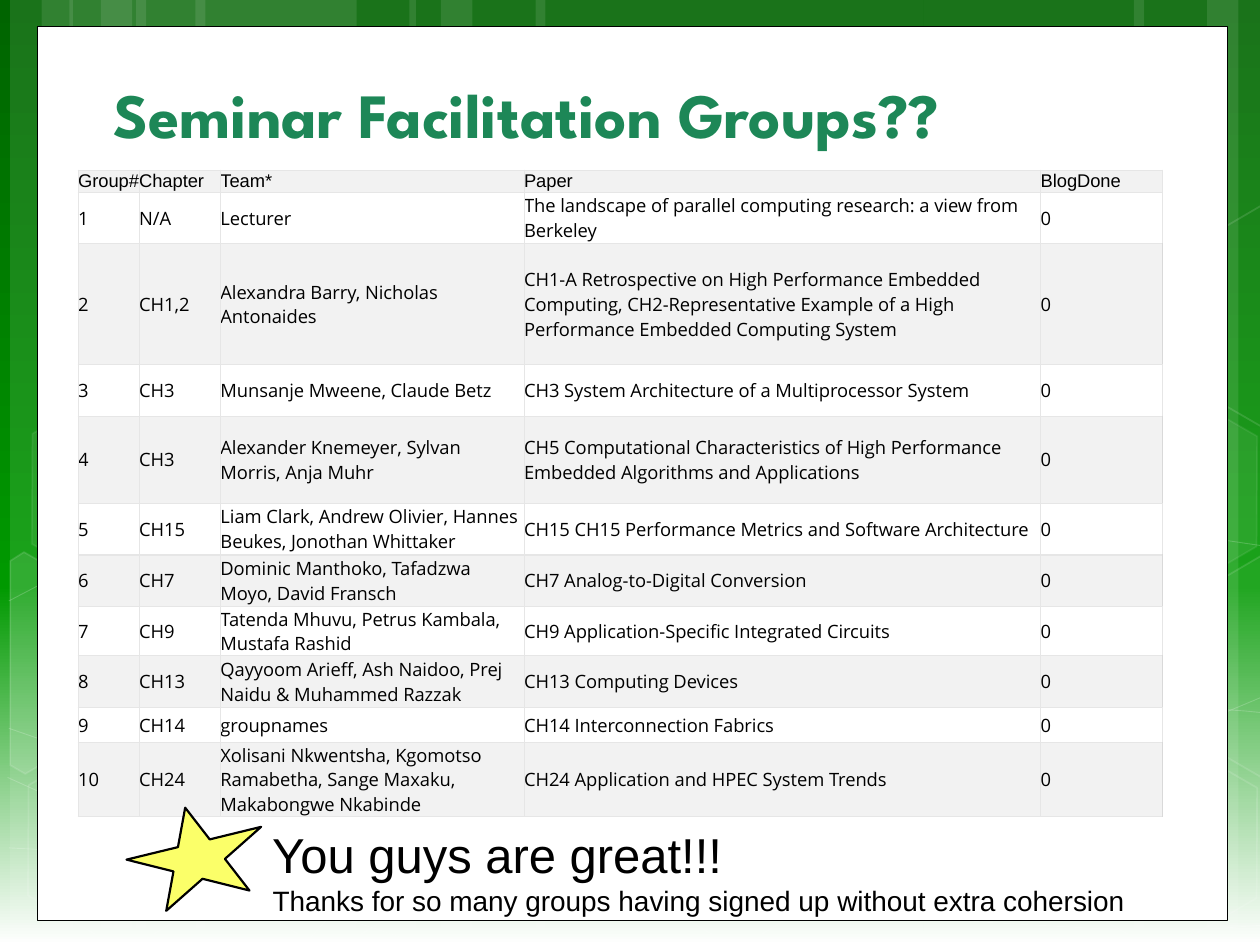
import dataclasses
import math
import typing

import lxml.etree
import pptx
import pptx.dml.color
import pptx.enum.shapes
import pptx.enum.text
import pptx.oxml
import pptx.oxml.ns
import pptx.util

RGB = pptx.dml.color.RGBColor
SHAPE = pptx.enum.shapes.MSO_SHAPE
ANCHOR = pptx.enum.text.MSO_ANCHOR
ALIGN = pptx.enum.text.PP_ALIGN
qn = pptx.oxml.ns.qn

WHITE = RGB(0xFF, 0xFF, 0xFF)
BLACK = RGB(0x00, 0x00, 0x00)
DARK_GREEN = RGB(0x00, 0x64, 0x00)
MID_GREEN = RGB(0x00, 0x99, 0x00)
TITLE_GREEN = RGB(0x1D, 0x87, 0x57)
BAND = RGB(0xF2, 0xF2, 0xF2)
RULE = RGB(0xE6, 0xE6, 0xE6)
EDGE_RULE = RGB(0xD9, 0xD9, 0xD9)
YELLOW = RGB(0xFB, 0xFF, 0x69)

# The slide is a grid of 100 columns by 75 rows of square units
UNIT = pptx.util.Inches(0.1)
COLS, ROWS = 100, 75
HEXAGON_TURN = 30
Point = tuple[float, float]


@dataclasses.dataclass
class Box:
    x: float
    y: float
    w: float
    h: float

    def emu(self) -> list[int]:
        return [round(v * UNIT) for v in (self.x, self.y, self.w, self.h)]


@dataclasses.dataclass
class Style:
    fill: typing.Optional[RGB] = None
    alpha: int = 100
    line: typing.Optional[RGB] = None
    width: float = 1
    line_alpha: int = 100


def set_alpha(fill, percent: int) -> None:
    if percent < 100:
        color = fill._xPr.find(qn("a:solidFill"))[0]
        lxml.etree.SubElement(color, qn("a:alpha")).set("val", str(percent * 1000))


def apply_style(sp, style: Style) -> None:
    sp.shadow.inherit = False
    for fill, color, alpha in ((sp.fill, style.fill, style.alpha),
                               (sp.line.fill, style.line, style.line_alpha)):
        if color is None:
            fill.background()
        else:
            fill.solid()
            fill.fore_color.rgb = color
            set_alpha(fill, alpha)
    if style.line is not None:
        sp.line.width = pptx.util.Pt(style.width)


def add_shape(s, kind, box: Box, style: Style, rotation: float = 0):
    sp = s.shapes.add_shape(kind, *box.emu())
    sp.rotation = rotation
    apply_style(sp, style)
    return sp


def add_outline(s, points: list[Point], style: Style, close: bool):
    start, *rest = [(round(x * UNIT), round(y * UNIT)) for x, y in points]
    builder = s.shapes.build_freeform(*start, scale=1.0)
    builder.add_line_segments(rest, close=close)
    sp = builder.convert_to_shape()
    apply_style(sp, style)
    return sp


def turn_back(points: list[Point], pivot: Point, degrees: float) -> list[Point]:
    cos, sin = math.cos(math.radians(degrees)), math.sin(math.radians(degrees))
    px, py = pivot
    return [(px + (x - px) * cos + (y - py) * sin, py - (x - px) * sin + (y - py) * cos)
            for x, y in points]


def bezier(points: list[Point], steps: int = 3) -> list[Point]:
    """Sample chained cubic curves: a start, then three points per curve."""
    out = [points[0]]
    for i in range(0, len(points) - 1, 3):
        for k in range(1, steps + 1):
            t = k / steps
            weights = ((1 - t) ** 3, 3 * t * (1 - t) ** 2, 3 * t * t * (1 - t), t ** 3)
            x, y = (sum(w * p[axis] for w, p in zip(weights, points[i:i + 4])) for axis in (0, 1))
            out.append((x, y))
    return out


def write(tf, text: str, *, size: float, font: str = "Arial", color: RGB = BLACK,
          bold: bool = False, align=ALIGN.LEFT) -> None:
    p = tf.paragraphs[0]
    p.alignment = align
    r = p.add_run()
    r.text = text
    r.font.size, r.font.name, r.font.bold = pptx.util.Pt(size), font, bold
    r.font.color.rgb = color


def add_text(s, box: Box, text: str, wrap: bool = False, anchor=ANCHOR.TOP, **fmt) -> None:
    tf = s.shapes.add_textbox(*box.emu()).text_frame
    tf.word_wrap, tf.vertical_anchor = wrap, anchor
    write(tf, text, **fmt)


def set_borders(cell, right: RGB) -> None:
    tcPr = cell._tc.get_or_add_tcPr()
    for i, (side, color) in enumerate((("L", RULE), ("R", right), ("T", RULE), ("B", RULE))):
        ln = lxml.etree.Element(qn(f"a:ln{side}"), w=str(pptx.util.Pt(0.75)))
        fill = lxml.etree.SubElement(ln, qn("a:solidFill"))
        lxml.etree.SubElement(fill, qn("a:srgbClr")).set("val", str(color))
        tcPr.insert(i, ln)


# Backdrop: strips as (left, width), curves as points
STRIPS = [(10.8, 17.5), (0.8, 5), (3.3, 8.3), (15.5, 17.5), (5.5, 5), (8, 8.3),
          (73.3, 17.5), (95.8, 5), (90, 8.3), (42.5, 30.8), (32.5, 5), (35, 8.3)]
CURVES = [
    [(0.7, 67.3), (6.1, 67.6), (11.5, 67.9), (19, 67.8), (26.5, 67.7), (35.8, 67.5), (45.8, 66.5),
     (55.8, 65.5), (70, 63.6), (79.2, 61.7), (88.3, 59.8), (97.7, 56.8), (100.7, 55.1)],
    [(0.7, 47.7), (3.6, 46.1), (6.5, 44.6), (12.1, 43.1), (17.8, 41.6), (25.9, 39.4), (34.7, 38.7),
     (43.6, 38), (54.4, 37.9), (65.4, 38.7), (76.4, 39.5), (94.7, 42.6), (100.7, 43.4)],
    [(0.6, 61.7), (12.7, 67.2), (24.7, 72.7), (33.4, 74.9)],
    [(0.7, 57.8), (3.8, 58.9), (7, 60), (12.8, 61.6), (18.6, 63.1), (27.3, 65.6), (35.7, 67.3),
     (44, 69), (54.5, 70.8), (62.8, 71.8), (71.1, 72.9), (80, 73.3), (85.3, 73.6),
     (90.5, 74), (91.9, 73.8), (94.5, 73.8), (97.1, 73.7), (98.9, 73.5), (100.7, 73.4)],
    [(24.2, 74.9), (26, 72.9), (27.8, 70.9), (30.2, 69.1), (32.6, 67.3), (36, 65.3), (38.8, 63.9),
     (41.6, 62.5), (43.3, 61.9), (47, 60.9), (50.6, 59.9), (57.3, 58.5), (60.8, 57.8),
     (64.4, 57.1), (64.9, 57.1), (68, 56.9), (71.1, 56.6), (76, 56.3), (79.4, 56.2),
     (82.9, 56.1), (88.6, 56.2), (95.3, 56.2), (97.1, 56.3), (98.8, 56.4), (100.6, 56.6)],
]
# Hexagons as (left, top, fill opacity, line opacity)
HEXAGONS = [(49.7, 58.9, 6, 12), (1.1, 59.1, 0, 12), (1.4, 31.2, 7, 8),
            (17.4, 59.2, 0, 12), (83.4, 59.3, 0, 12), (83.4, 31.4, 7, 8)]
# Hexagons cut by the slide's edge as (fill opacity, pivot, corners)
CUT_HEXAGONS = [
    (10, (3.6, 53.5), [(0.8, 44.5), (1.9, 43.8), (9.6, 48.2), (9.5, 57), (2, 61.4), (0.8, 60.7)]),
    (4, (98.5, 52), [(92.6, 48.5), (100.1, 44.1), (100.9, 44.6), (100.9, 61.3), (100.2, 61.7),
                     (92.6, 57.3)]),
    (0, (98.5, 24.1), [(92.6, 20.7), (100.1, 16.3), (101, 16.8), (100.9, 33.5), (100.2, 33.9),
                       (92.6, 29.5)]),
]

COLUMN_WIDTHS = [4.85, 6.45, 24.1, 41, 9.7]
ROW_HEIGHTS = [1.65, 4.1, 9.6, 4.1, 6.9, 4.1, 4.1, 3.9, 4.1, 2.8, 5.9]
HEADER = ("Group#", "Chapter", "Team*", "Paper", "BlogDone")
# Chapter, team and paper; the group number is the position
GROUPS = [
    ("N/A", "Lecturer", "The landscape of parallel computing research: a view from Berkeley"),
    ("CH1,2", "Alexandra Barry, Nicholas Antonaides",
     "CH1-A Retrospective on High Performance Embedded Computing, "
     "CH2-Representative Example of a High Performance Embedded Computing System"),
    ("CH3", "Munsanje Mweene, Claude Betz", "CH3 System Architecture of a Multiprocessor System"),
    ("CH3", "Alexander Knemeyer, Sylvan Morris, Anja Muhr",
     "CH5 Computational Characteristics of High Performance Embedded Algorithms and Applications"),
    ("CH15", "Liam Clark, Andrew Olivier, Hannes Beukes, Jonothan Whittaker",
     "CH15 CH15 Performance Metrics and Software Architecture"),
    ("CH7", "Dominic Manthoko, Tafadzwa Moyo, David Fransch", "CH7 Analog-to-Digital Conversion"),
    ("CH9", "Tatenda Mhuvu, Petrus Kambala, Mustafa Rashid",
     "CH9 Application-Specific Integrated Circuits"),
    ("CH13", "Qayyoom Arieff, Ash Naidoo, Prej Naidu & Muhammed Razzak", "CH13 Computing Devices"),
    ("CH14", "groupnames", "CH14 Interconnection Fabrics"),
    ("CH24", "Xolisani Nkwentsha, Kgomotso Ramabetha, Sange Maxaku, Makabongwe Nkabinde",
     "CH24 Application and HPEC System Trends"),
]


def draw_backdrop(s) -> None:
    fill = s.background.fill
    fill.gradient()
    fill.gradient_angle = 270
    stops = fill._fill._gradFill.find(qn("a:gsLst"))
    stops[:] = []
    for pos, color in ((0, DARK_GREEN), (62, MID_GREEN), (100, WHITE)):
        gs = lxml.etree.SubElement(stops, qn("a:gs"), pos=str(pos * 1000))
        lxml.etree.SubElement(gs, qn("a:srgbClr")).set("val", str(color))
    for x, w in STRIPS:
        add_shape(s, SHAPE.RECTANGLE, Box(x, 0, w, ROWS), Style(WHITE, 10))
    for points in CURVES:
        add_outline(s, bezier(points), Style(line=WHITE, width=0.5, line_alpha=20), close=False)
    for x, y, alpha, line_alpha in HEXAGONS:
        style = Style(WHITE if alpha else None, alpha, WHITE, 1, line_alpha)
        sp = add_shape(s, SHAPE.HEXAGON, Box(x, y, 17.5, 15.2), style, HEXAGON_TURN)
        sp.adjustments[0] = 0.285
    for alpha, pivot, corners in CUT_HEXAGONS:
        style = Style(WHITE if alpha else None, alpha, WHITE, 1, 12)
        sp = add_outline(s, turn_back(corners, pivot, HEXAGON_TURN), style, close=True)
        sp.rotation = HEXAGON_TURN
    add_shape(s, SHAPE.RECTANGLE, Box(3, 2.1, 94.4, 70.95), Style(WHITE, line=BLACK, width=0.5))


def draw_table(s) -> None:
    rows = [HEADER] + [(str(n), *group, "0") for n, group in enumerate(GROUPS, 1)]
    box = Box(6.2, 13.5, sum(COLUMN_WIDTHS), sum(ROW_HEIGHTS))
    table = s.shapes.add_table(len(rows), len(HEADER), *box.emu()).table
    table.first_row = table.horz_banding = False
    for column, width in zip(table.columns, COLUMN_WIDTHS):
        column.width = round(width * UNIT)
    for i, (row, height, values) in enumerate(zip(table.rows, ROW_HEIGHTS, rows)):
        row.height = round(height * UNIT)
        for j, (cell, text) in enumerate(zip(row.cells, values)):
            cell.margin_left = cell.margin_right = cell.margin_top = cell.margin_bottom = 0
            cell.vertical_anchor = ANCHOR.MIDDLE
            cell.fill.solid()
            cell.fill.fore_color.rgb = WHITE if i % 2 else BAND
            edge = i > 0 and i % 2 == 0 and j == len(HEADER) - 1
            set_borders(cell, EDGE_RULE if edge else RULE)
            write(cell.text_frame, text, size=10.5, font="Open Sans" if i else "Arial")


prs = pptx.Presentation()
prs.slide_width, prs.slide_height = COLS * UNIT, ROWS * UNIT
s = prs.slides.add_slide(prs.slide_layouts[6])
draw_backdrop(s)
add_text(s, Box(8, 4.9, 84.2, 7.6), "Seminar Facilitation Groups??", wrap=True,
         anchor=ANCHOR.BOTTOM, size=36, font="League Spartan", color=TITLE_GREEN, bold=True)
draw_table(s)
# Closing thanks
add_shape(s, SHAPE.STAR_5_POINT, Box(10.1, 64, 11, 7.6),
          Style(YELLOW, line=BLACK, width=1.25), 346.3)
add_text(s, Box(20.35, 64.95, 38.2, 5.7), "You guys are great!!!", size=28, align=ALIGN.CENTER)
add_text(s, Box(20.2, 69.65, 70.5, 3.7), size=16, align=ALIGN.CENTER,
         text="Thanks for so many groups having signed up without extra cohersion")
prs.save("out.pptx")
